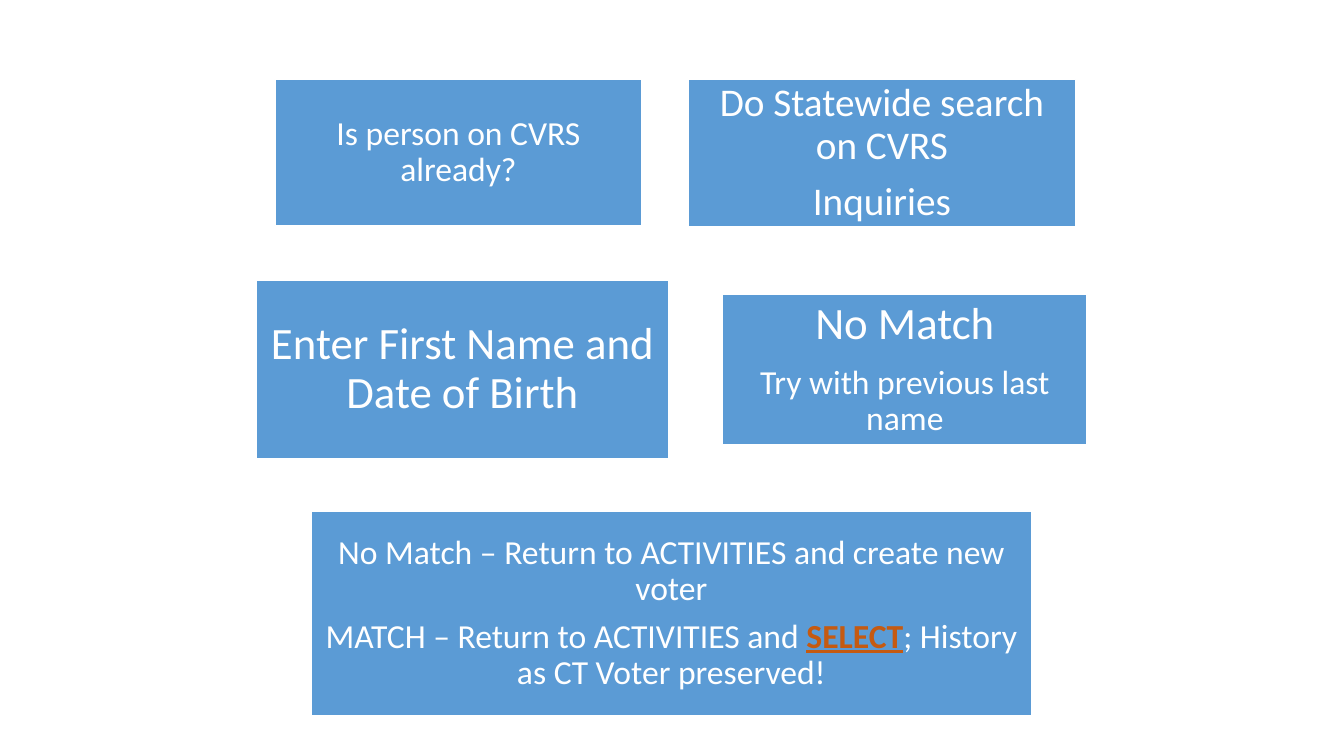
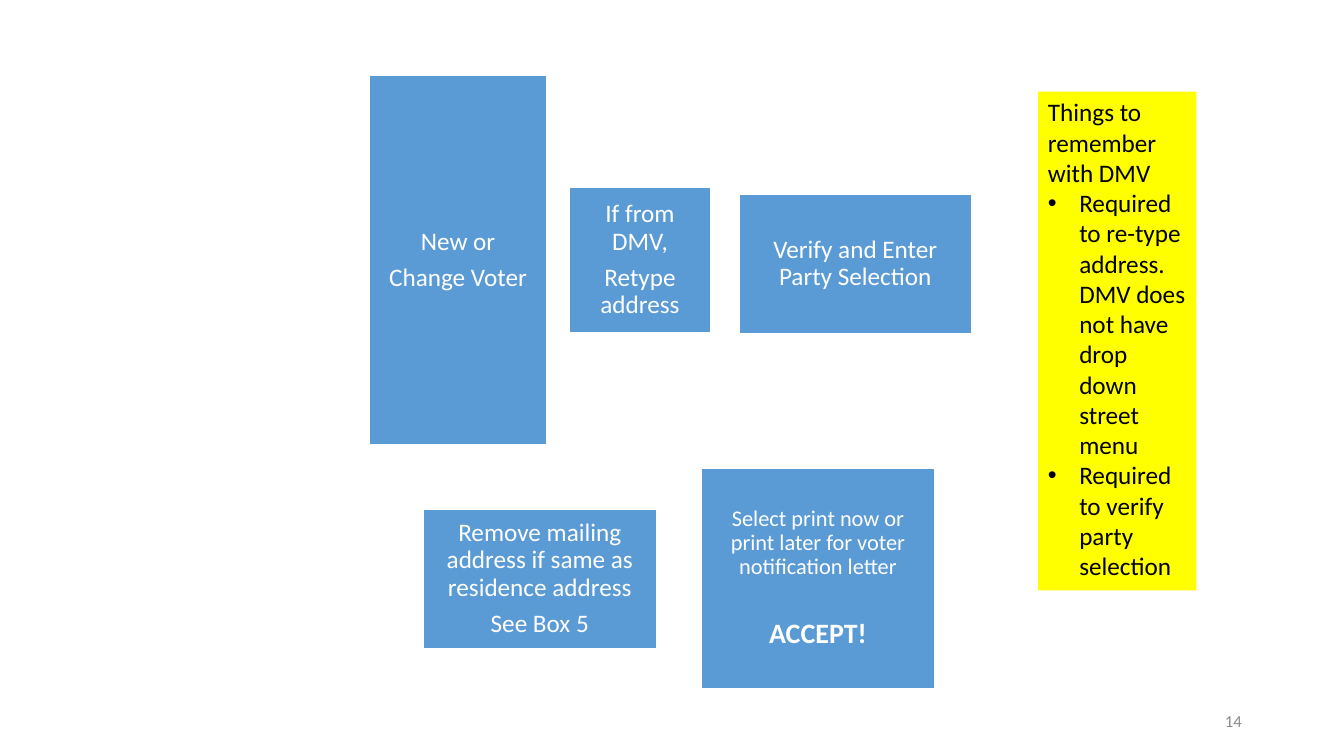
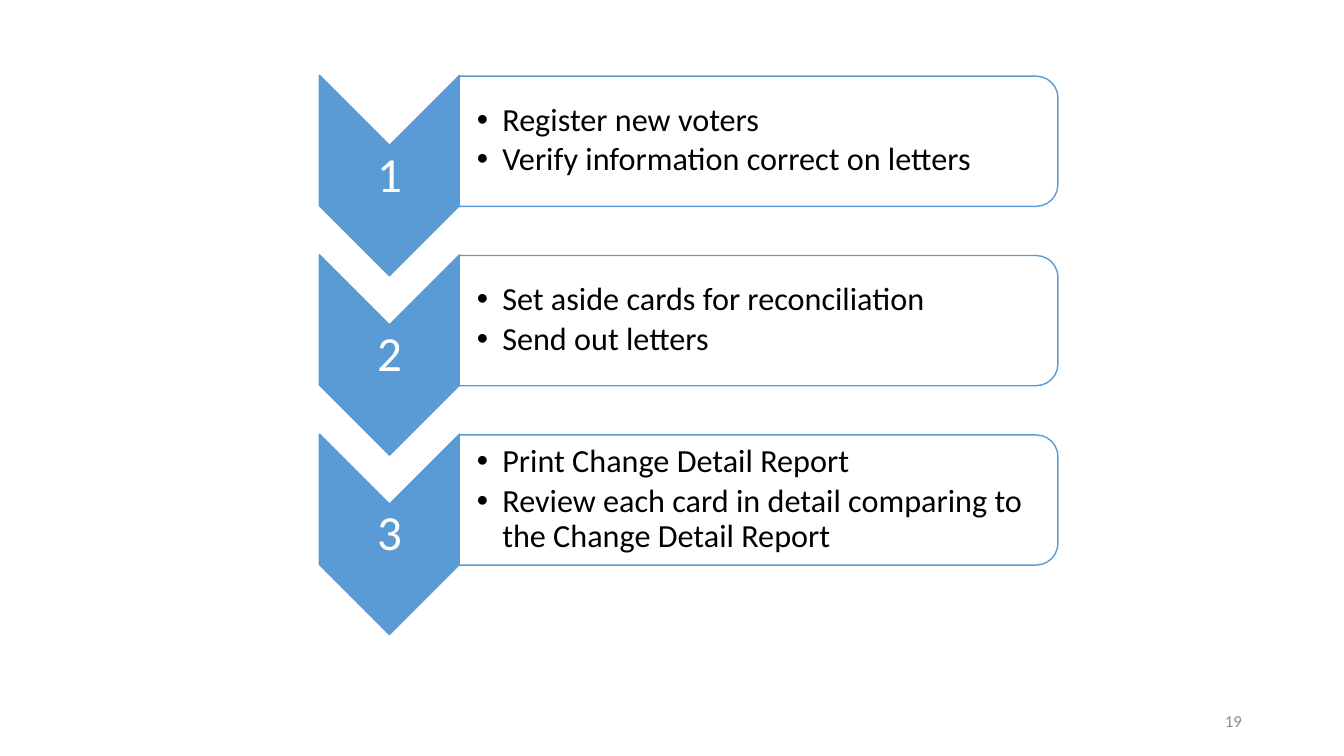
from dataclasses import dataclass
from typing import NamedTuple

from lxml import etree
from pptx import Presentation
from pptx.dml.color import RGBColor
from pptx.enum.shapes import MSO_SHAPE
from pptx.enum.text import MSO_ANCHOR, MSO_AUTO_SIZE, PP_ALIGN
from pptx.oxml.ns import qn
from pptx.util import Cm, Pt

RECT = MSO_SHAPE.RECTANGLE
CHEVRON = MSO_SHAPE.CHEVRON
TAB = MSO_SHAPE.ROUND_2_SAME_RECTANGLE
LEFT, CENTER, RIGHT = PP_ALIGN.LEFT, PP_ALIGN.CENTER, PP_ALIGN.RIGHT
TOP, MIDDLE = MSO_ANCHOR.TOP, MSO_ANCHOR.MIDDLE
GROW = MSO_AUTO_SIZE.SHAPE_TO_FIT_TEXT


@dataclass(frozen=True)
class Theme:
    font: str = "Calibri"
    blue: str = "5B9BD5"
    white: str = "FFFFFF"
    black: str = "000000"
    yellow: str = "FFFF00"
    orange: str = "C55A11"
    gray: str = "8C8C8C"
    huge: int = 35
    large: int = 32
    big: int = 28
    main: int = 24
    list: int = 23
    strong: int = 20
    body: int = 18
    small: int = 16
    foot: int = 12


THEME = Theme()


class Area(NamedTuple):
    """Left, top, width and height in centimetres."""
    x: float
    y: float
    w: float
    h: float

    def down(self, dist: float) -> "Area":
        return self._replace(y=self.y + dist)

    def cm(self) -> tuple:
        return tuple(Cm(side) for side in self)


@dataclass(frozen=True)
class Line:
    """A paragraph; key is the word in it that stands out."""
    text: str
    size: int
    bold: bool = False
    lead: float = 0
    key: str = ""
    dent: float = 0


@dataclass(frozen=True)
class Box:
    area: Area
    lines: tuple


def rgb(color: str) -> RGBColor:
    return RGBColor.from_string(color)


def write(frame, lines, *, color=THEME.black, align=LEFT, anchor=MIDDLE,
          pad=(0.25, 0.13, 0.25, 0.13), pitch=1.0, gap=0.0) -> None:
    """Fill a text frame; gap is the space after, as a share of the size."""
    frame.word_wrap = True
    frame.vertical_anchor = anchor
    (frame.margin_left, frame.margin_top,
     frame.margin_right, frame.margin_bottom) = map(Cm, pad)
    for i, line in enumerate(lines):
        para = frame.add_paragraph() if i else frame.paragraphs[0]
        para.alignment = align
        para.line_spacing = pitch
        para.space_before = Pt(line.lead)
        para.space_after = Pt(line.size * gap)
        if line.dent:
            bullet(para, line.dent)
        parts = line.text.partition(line.key) if line.key else (line.text,)
        for part in filter(None, parts):
            mark = part == line.key
            run = para.add_run()
            run.text = part
            font = run.font
            font.name, font.size = THEME.font, Pt(line.size)
            font.bold = line.bold or mark
            font.underline = mark
            font.color.rgb = rgb(THEME.orange if mark else color)


def bullet(para, dent: float) -> None:
    props = para._p.get_or_add_pPr()
    props.set("marL", str(Cm(dent)))
    props.set("indent", str(-Cm(dent)))
    etree.SubElement(props, qn("a:buFont")).set("typeface", "Arial")
    etree.SubElement(props, qn("a:buChar")).set("char", "•")


def draw(slide, kind, area: Area, fill: str, edge: str = ""):
    shape = slide.shapes.add_shape(kind, *area.cm())
    shape.shadow.inherit = False
    shape.fill.solid()
    shape.fill.fore_color.rgb = rgb(fill)
    if edge:
        shape.line.color.rgb = rgb(edge)
        shape.line.width = Pt(1)
    else:
        shape.line.fill.background()
    return shape


def turn(slide, kind, area: Area, fill: str) -> None:
    """Draw a shape turned by 90 degrees so that it covers the area."""
    x, y, w, h = area
    shift = (w - h) / 2
    shape = draw(slide, kind, Area(x + shift, y - shift, h, w), fill, THEME.blue)
    shape.rotation = 90


def label(slide, area: Area, lines, **form) -> None:
    write(slide.shapes.add_textbox(*area.cm()).text_frame, lines, **form)


def boxes(slide, items) -> None:
    for item in items:
        shape = draw(slide, RECT, item.area, THEME.blue, THEME.white)
        pad = 0.0106 * item.lines[0].size
        write(shape.text_frame, item.lines, color=THEME.white, align=CENTER,
              pad=(pad,) * 4, pitch=0.9, gap=0.35)


def number(slide, value: int) -> None:
    label(slide, Area(23.93, 17.65, 7.62, 1.02), [Line(str(value), THEME.foot)],
          color=THEME.gray, align=RIGHT)


def search(slide) -> None:
    boxes(slide, (
        Box(Area(6.93, 2.01, 9.25, 3.68),
            (Line("Is person on CVRS already?", THEME.main),)),
        Box(Area(17.35, 2.01, 9.75, 3.71),
            (Line("Do Statewide search on CVRS", THEME.big),
             Line("Inquiries", THEME.big))),
        Box(Area(6.45, 7.06, 10.41, 4.5),
            (Line("Enter First Name and Date of Birth", THEME.large),)),
        Box(Area(18.21, 7.42, 9.19, 3.78),
            (Line("No Match", THEME.large),
             Line("Try with previous last name", THEME.main))),
        Box(Area(7.85, 12.88, 18.14, 5.16),
            (Line("No Match – Return to ACTIVITIES and create new voter", THEME.main),
             Line("MATCH – Return to ACTIVITIES and SELECT; "
                  "History as CT Voter preserved!", THEME.main, key="SELECT"))),
    ))


def change(slide) -> None:
    number(slide, 14)
    size = THEME.body
    boxes(slide, (
        Box(Area(9.32, 1.9, 4.45, 9.3),
            (Line("New or", size), Line("Change Voter", size))),
        Box(Area(14.35, 4.72, 3.56, 3.66),
            (Line("If from DMV,", size), Line("Retype address", size))),
        Box(Area(18.62, 4.9, 5.87, 3.51),
            (Line("Verify and Enter Party Selection", size),)),
        Box(Area(10.67, 12.83, 5.87, 3.51),
            (Line("Remove mailing address if same as residence address", size),
             Line("See Box 5", size))),
        Box(Area(17.68, 11.79, 5.87, 5.56),
            (Line("Select print now or print later for voter notification letter",
                  THEME.small),
             Line("ACCEPT!", THEME.strong, bold=True, lead=23))),
    ))
    note = draw(slide, RECT, Area(26.16, 2.31, 3.99, 12.57), THEME.yellow)
    write(note.text_frame, (
        Line("Things to remember with DMV", size),
        Line("Required to re-type address. DMV does not have drop down street menu",
             size, dent=0.79),
        Line("Required to verify party selection", size, dent=0.79),
    ), anchor=TOP)
    note.text_frame.auto_size = GROW


def steps(slide) -> None:
    number(slide, 19)
    tasks = (
        ("Register new voters", "Verify information correct on letters"),
        ("Set aside cards for reconciliation", "Send out letters"),
        ("Print Change Detail Report",
         "Review each card in detail comparing to the Change Detail Report"),
    )
    for i, texts in enumerate(tasks):
        drop = 4.52 * i
        turn(slide, CHEVRON, Area(8.05, 1.9, 3.53, 5.05).down(drop), THEME.blue)
        label(slide, Area(8.05, 3.68, 3.53, 1.52).down(drop),
              [Line(str(i + 1), THEME.huge)], color=THEME.white, align=CENTER,
              pad=(0.05,) * 4, pitch=0.9, gap=0.35)
        turn(slide, TAB, Area(11.57, 1.92, 15.09, 3.28).down(drop), THEME.white)
        label(slide, Area(11.57, 2.06, 14.94, 2.97).down(drop),
              [Line(text, THEME.list, dent=0.64) for text in texts],
              pad=(0.45, 0.04, 0.04, 0.04), pitch=0.9, gap=0.15)


def main() -> None:
    deck = Presentation()
    deck.slide_width, deck.slide_height = Cm(33.87), Cm(19.05)
    for build in (search, change, steps):
        build(deck.slides.add_slide(deck.slide_layouts[6]))
    deck.save("out.pptx")


if __name__ == "__main__":
    main()
